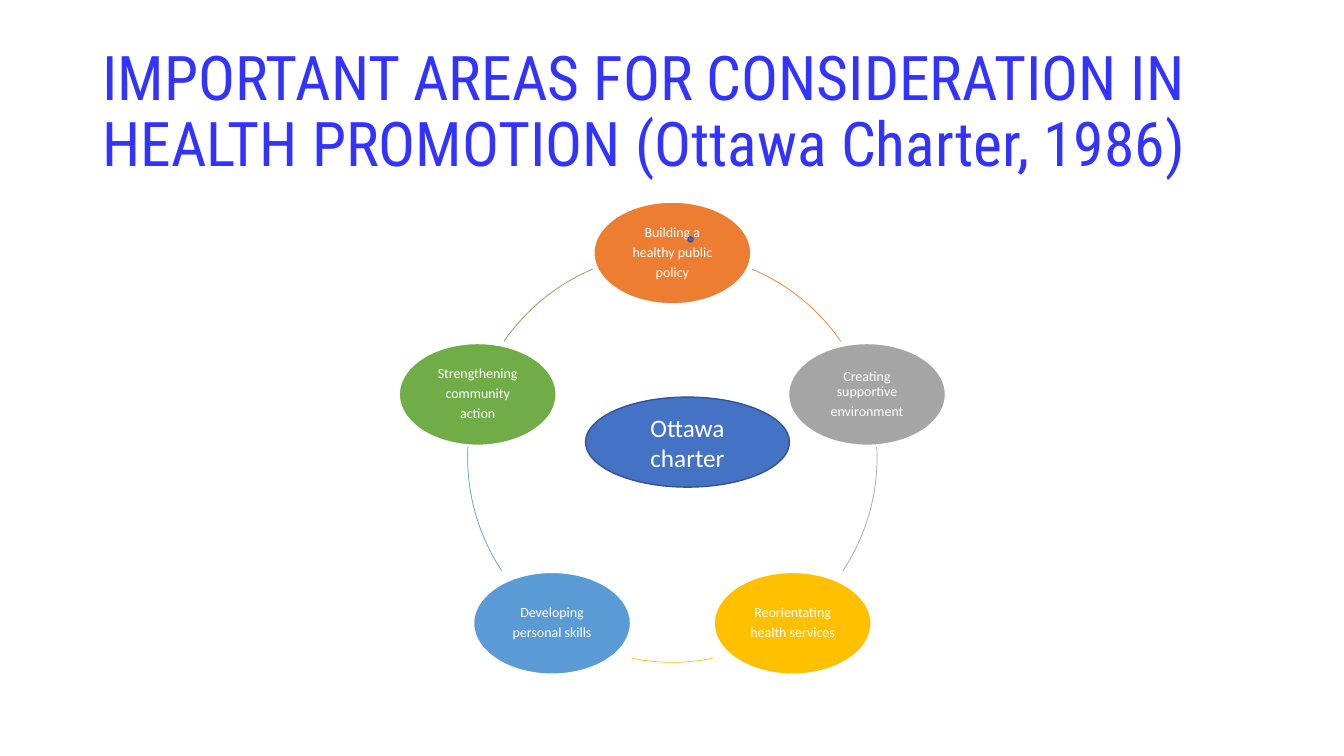
import math
from dataclasses import dataclass

from pptx import Presentation
from pptx.dml.color import RGBColor
from pptx.enum import shapes as sh, text as tx
from pptx.util import Pt

MID = (480.25, 326.9)
RADIUS = 146.2
OVAL = (112.1, 72.7)
WHITE, BLUE, NAVY = "FFFFFF", "4472C4", "325491"


@dataclass
class Stage:
    text: str
    color: str
    start: float  # arc to the next stage, degrees clockwise from the right
    end: float


STAGES = [
    Stage("Building a\nhealthy public\npolicy", "ED7D31", 292.9, 325.4),
    Stage("Creating supportive\nenvironment", "A5A5A5", 356.9, 33.5),
    Stage("Reorientating\nhealth services", "FFC000", 78.6, 101.4),
    Stage("Developing\npersonal skills", "5B9BD5", 146.5, 183.1),
    Stage("Strengthening\ncommunity\naction", "70AD47", 214.6, 247.1),
]


def rgb(code: str) -> RGBColor:
    return RGBColor.from_string(code)


def style(para, font: str, size: float, color: str, align) -> None:
    para.alignment = align
    for run in para.runs:
        run.font.name = font
        run.font.size = Pt(size)
        run.font.color.rgb = rgb(color)


def oval(slide, mid: tuple, size: tuple, fill: str, line: str):
    """Draw an ellipse around its middle."""
    (x, y), (w, h) = mid, size
    shape = slide.shapes.add_shape(sh.MSO_SHAPE.OVAL, Pt(x - w / 2), Pt(y - h / 2), Pt(w), Pt(h))
    shape.shadow.inherit = False
    shape.fill.solid()
    shape.fill.fore_color.rgb = rgb(fill)
    shape.line.color.rgb = rgb(line)
    shape.line.width = Pt(1)
    return shape


def label(shape, words: str, size: float):
    frame = shape.text_frame
    frame.text = words
    frame.word_wrap = True
    frame.vertical_anchor = tx.MSO_ANCHOR.MIDDLE
    for para in frame.paragraphs:
        style(para, "Calibri", size, WHITE, tx.PP_ALIGN.CENTER)
    return frame


def node(slide, stage: Stage, angle: float) -> None:
    mid = (MID[0] + RADIUS * math.cos(angle), MID[1] + RADIUS * math.sin(angle))
    frame = label(oval(slide, mid, OVAL, stage.color, WHITE), stage.text, 10)
    frame.margin_left = frame.margin_right = Pt(2.9)
    frame.margin_top = frame.margin_bottom = Pt(2.9)
    for para in frame.paragraphs:
        para.line_spacing = 0.9
        para.space_after = Pt(3.5)


def arc(slide, stage: Stage) -> None:
    side = Pt(2 * RADIUS)
    shape = slide.shapes.add_shape(
        sh.MSO_SHAPE.ARC, Pt(MID[0] - RADIUS), Pt(MID[1] - RADIUS), side, side)
    # Adjustments count 100000 units as 1; a degree is 60000 units
    shape.adjustments[0] = stage.start * 0.6
    shape.adjustments[1] = stage.end * 0.6
    shape.shadow.inherit = False
    shape.fill.background()
    shape.line.color.rgb = rgb(stage.color)
    shape.line.width = Pt(0.5)


def main() -> None:
    deck = Presentation()
    deck.slide_width, deck.slide_height = Pt(960), Pt(540)
    slide = deck.slides.add_slide(deck.slide_layouts[5])

    # Title
    title = slide.shapes.title
    title.left, title.top, title.width, title.height = Pt(66), Pt(28.75), Pt(828), Pt(104.4)
    frame = title.text_frame
    frame.text = "IMPORTANT AREAS FOR CONSIDERATION IN HEALTH PROMOTION (Ottawa Charter, 1986)"
    frame.word_wrap = True
    frame.auto_size = tx.MSO_AUTO_SIZE.NONE
    frame.vertical_anchor = tx.MSO_ANCHOR.MIDDLE
    head = frame.paragraphs[0]
    head.line_spacing = 0.9
    style(head, "Roboto Condensed", 44, "3333FF", tx.PP_ALIGN.LEFT)

    # Cycle, clockwise from the top
    for i, stage in enumerate(STAGES):
        node(slide, stage, math.tau * i / len(STAGES) - math.pi / 2)
        arc(slide, stage)

    # Small dot and hub
    oval(slide, (493.2, 171), (3.6, 3.6), BLUE, NAVY)
    hub = oval(slide, (491.1, 315.8), (145.6, 64.3), BLUE, NAVY)
    label(hub, "Ottawa charter", 18)

    deck.save("out.pptx")


if __name__ == "__main__":
    main()
